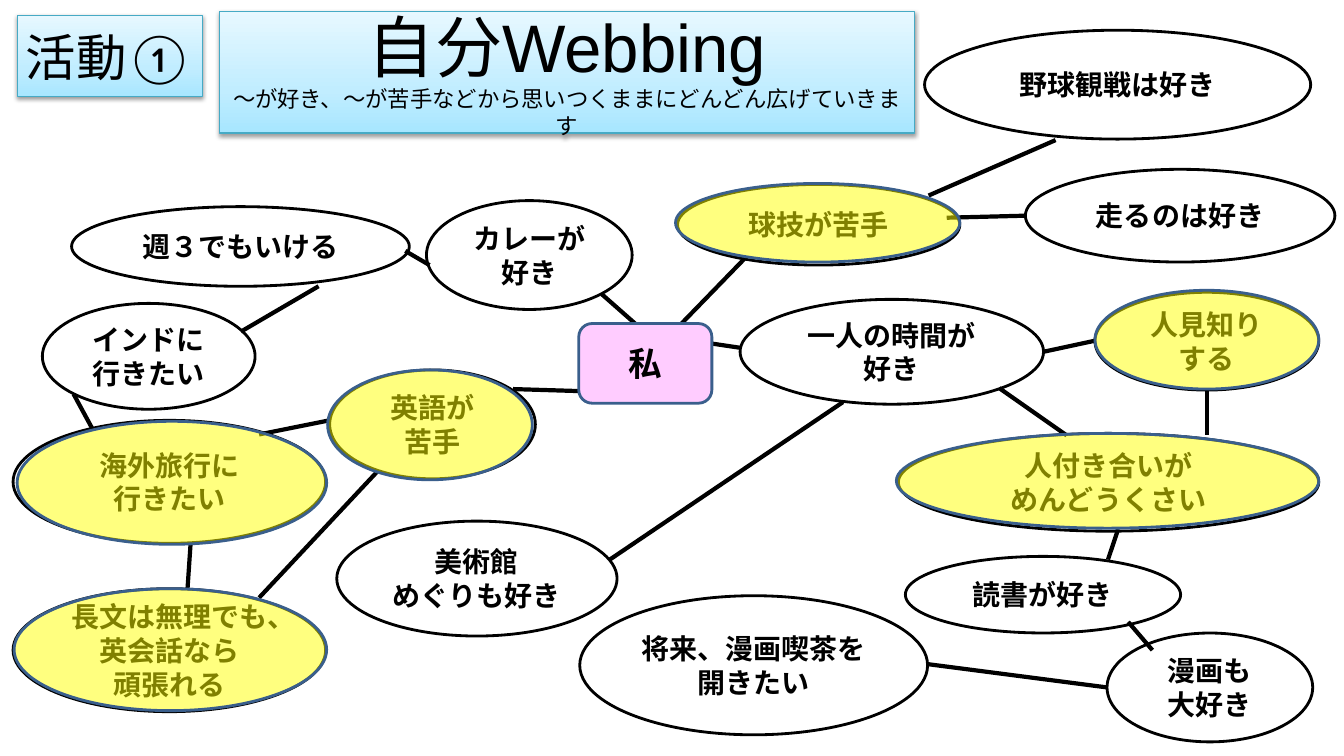
import pptx
import pptx.util
import pptx.dml.color
import pptx.enum.shapes
import pptx.enum.text
import pptx.oxml
import pptx.oxml.ns
from lxml import etree

SHAPE = pptx.enum.shapes.MSO_SHAPE
NOTO = "Noto Sans CJK JP"
BLACK, NAVY, TEAL = "000000", "3A5F8C", "46AAC5"
PINK, YELLOW = "FFCCFF", "FFFF00"
BLUES = [(0, "A7E6FF"), (35, "C1EDFF"), (100, "E7F8FF")]

# Content: boxes are left, top, width, height in inches
IDEAS = [
    ((5.75, 5.91, 3.45, 1.38), ["将来、漫画喫茶を", "開きたい"]),
    ((9.17, 0.3, 3.83, 1.08), ["野球観戦は好き"]),
    ((6.72, 1.83, 2.8, 0.8), ["球技が苦手"]),
    ((8.91, 4.3, 4.17, 0.97), ["人付き合いが", "めんどうくさい"]),
    ((8.98, 5.52, 2.73, 0.76), ["読書が好き"]),
    ((3.27, 3.67, 2.04, 1.08), ["英語が", "苦手"]),
    ((10.98, 6.28, 2.04, 1.08), ["漫画も", "大好き"]),
    ((10.17, 1.68, 3.07, 0.92), ["走るのは好き"]),
    ((0.71, 2.05, 3.35, 0.79), ["週３でもいける"]),
    ((7.34, 2.97, 3.01, 1.04), ["一人の時間が好き"]),
    ((4.23, 1.99, 2.04, 1.08), ["カレーが好き"]),
    ((0.42, 3.01, 2.11, 1.05), ["インドに行きたい"]),
    ((3.34, 5.17, 2.78, 1.14), ["美術館", "めぐりも好き"]),
    ((10.86, 2.9, 2.22, 0.97), ["人見知り", "する"]),
    ((0.13, 5.84, 3.1, 1.22), ["長文は無理でも、英会話なら", "頑張れる"]),
    ((0.13, 4.17, 3.1, 1.22), ["海外旅行に", "行きたい"]),
]
LINKS = [
    (10.98, 6.82, 9.21, 6.59), (9.21, 1.94, 10.47, 1.39),
    (6.74, 3.23, 7.4, 2.55), (10.58, 4.32, 9.91, 3.85),
    (11.09, 5.25, 10.99, 5.55), (5.09, 3.86, 5.75, 3.88),
    (11.19, 6.17, 11.43, 6.45), (9.39, 2.16, 10.17, 2.14),
    (4.02, 2.49, 4.26, 2.63), (7.07, 3.41, 7.34, 3.45),
    (6.39, 3.29, 5.97, 2.92), (2.39, 3.29, 3.16, 2.84),
    (8.36, 3.99, 6.05, 5.55), (10.86, 3.38, 10.35, 3.49),
    (11.97, 3.87, 11.97, 4.32), (3.75, 4.67, 2.57, 5.93),
    (1.86, 5.84, 1.89, 5.4), (0.92, 4.26, 0.73, 3.91),
    (3.27, 4.17, 2.57, 4.31),
]
MARKS = [
    (3.25, 3.67, 2.03, 1.09), (6.7, 1.82, 2.82, 0.78),
    (10.86, 2.88, 2.22, 0.98), (8.89, 4.3, 4.19, 0.94),
    (0.17, 4.18, 3.07, 1.22), (0.14, 5.84, 3.1, 1.21),
]
ME = ((5.74, 3.21, 1.32, 0.79), "私")
# Banners: box, wrap, paragraphs of runs (text, size, font)
BANNERS = [
    ((2.18, 0.11, 6.89, 1.21), True, [
        [("自分", 48, "Calibri"), ("Webbing", 48, "Arial")],
        [("～が好き、～が苦手などから思いつくままにどんどん広げていきます",
          16, "Calibri")]]),
    ((0.17, 0.15, 1.84, 0.81), False, [[("活動①", 36, "Calibri")]]),
]

deck = pptx.Presentation()


def place(nums):
    return [pptx.util.Cm(n * 2.54) for n in nums]


deck.slide_width, deck.slide_height = place((13.33, 7.5))
slide = deck.slides.add_slide(deck.slide_layouts[6])


def color(code):
    return pptx.dml.color.RGBColor.from_string(code)


def child(node, tag, **attrs):
    return etree.SubElement(node, pptx.oxml.ns.qn(tag), **attrs)


def draw(kind, box, edge, width, fill=None):
    shape = slide.shapes.add_shape(kind, *place(box))
    shape.shadow.inherit = False
    shape.line.color.rgb = color(edge)
    shape.line.width = pptx.util.Pt(width)
    if fill:
        shape.fill.solid()
        shape.fill.fore_color.rgb = color(fill)
    else:
        shape.fill.background()
    return shape


def write(shape, paras, bold=False, wrap=True):
    frame = shape.text_frame
    frame.word_wrap = wrap
    frame.vertical_anchor = pptx.enum.text.MSO_ANCHOR.MIDDLE
    for i, runs in enumerate(paras):
        para = frame.add_paragraph() if i else frame.paragraphs[0]
        para.alignment = pptx.enum.text.PP_ALIGN.CENTER
        for text, size, face in runs:
            run = para.add_run()
            run.text = text
            run.font.size = pptx.util.Pt(size)
            run.font.bold = bold
            run.font.color.rgb = color(BLACK)
            run.font.name = face
            child(run.font._element, "a:ea", typeface=face)


def shade(shape):
    shape.fill.gradient()
    shape.fill.gradient_angle = 90
    props = shape._element.spPr
    stops = props.find(".//" + pptx.oxml.ns.qn("a:gsLst"))
    stops.clear()
    for pos, code in BLUES:
        stop = child(stops, "a:gs", pos=str(pos * 1000))
        child(stop, "a:srgbClr", val=code)
    glow = child(props.find(pptx.oxml.ns.qn("a:effectLst")), "a:outerShdw",
                 blurRad=str(pptx.util.Pt(3.1)), dist=str(pptx.util.Pt(1.6)),
                 dir="5400000", rotWithShape="0")
    child(child(glow, "a:srgbClr", val=BLACK), "a:alpha", val="38000")


# Links between ideas
for ends in LINKS:
    link = slide.shapes.add_connector(
        pptx.enum.shapes.MSO_CONNECTOR.STRAIGHT, *place(ends))
    link.line.color.rgb = color(BLACK)
    link.line.width = pptx.util.Pt(3)
    child(link._element.spPr, "a:effectLst")

# Ideas and the centre
for box, lines in IDEAS:
    oval = draw(SHAPE.OVAL, box, BLACK, 2)
    write(oval, [[(line, 20, NOTO)] for line in lines], True)
box, word = ME
write(draw(SHAPE.ROUNDED_RECTANGLE, box, NAVY, 2, PINK),
      [[(word, 24, NOTO)]], True)

# Half-clear yellow marks
for box in MARKS:
    mark = draw(SHAPE.OVAL, box, NAVY, 2, YELLOW)
    tint = mark._element.spPr.find(
        pptx.oxml.ns.qn("a:solidFill") + "/" + pptx.oxml.ns.qn("a:srgbClr"))
    child(tint, "a:alpha", val="50000")

# Banners
for box, wrap, paras in BANNERS:
    banner = draw(SHAPE.RECTANGLE, box, TEAL, 0.75)
    shade(banner)
    write(banner, paras, wrap=wrap)

deck.save("out.pptx")
